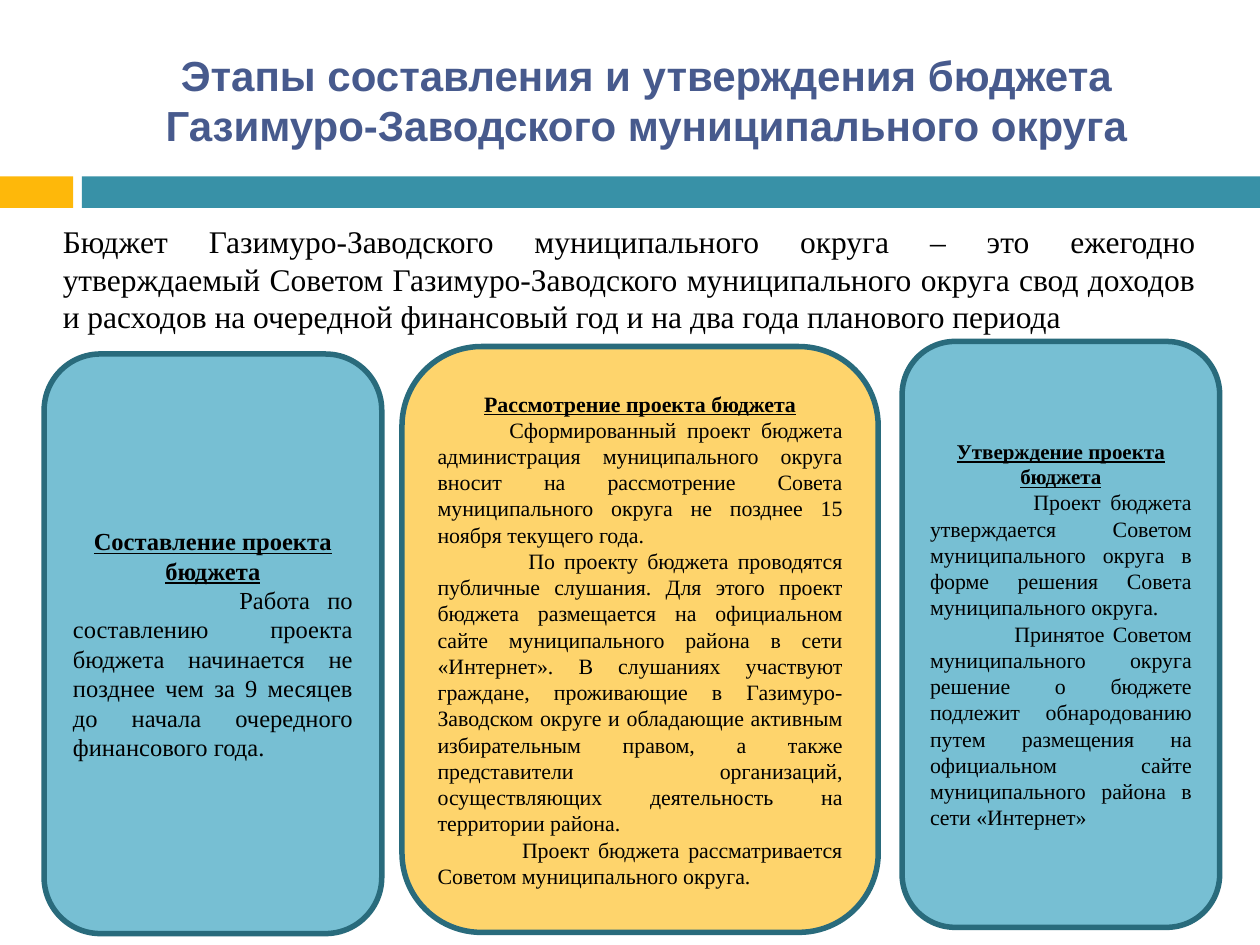
import pptx
import pptx.util
import pptx.dml.color
from pptx.enum.shapes import MSO_SHAPE
from pptx.enum.text import MSO_ANCHOR, PP_ALIGN

Inches = pptx.util.Inches
Pt = pptx.util.Pt

COLORS = {
    "white": "FFFFFF", "black": "000000", "title": "475A8D", "amber": "FEB80A",
    "teal": "3891A7", "border": "296B7C", "blue": "77BFD3", "yellow": "FED46C",
}
TITLE = "Этапы составления и утверждения бюджета Газимуро-Заводского муниципального округа"
INTRO = (
    "Бюджет Газимуро-Заводского муниципального округа – это ежегодно утверждаемый "
    "Советом Газимуро-Заводского муниципального округа свод доходов и расходов "
    "на очередной финансовый год и на два года планового периода"
)
BANDS = [((0, 1.4, 0.58, 0.25), "amber"), ((0.65, 1.4, 9.35, 0.25), "teal")]
STAGES = [
    {
        "box": (0.35, 2.81, 2.68, 4.6), "fill": "blue", "sizes": (14, 14),
        "heading": "Составление проекта бюджета",
        "body": [
            (1.32, "Работа по составлению проекта бюджета начинается не позднее чем "
                   "за 9 месяцев до начала очередного финансового года."),
        ],
    },
    {
        "box": (3.19, 2.75, 3.78, 4.65), "fill": "yellow", "sizes": (12.5, 12.5),
        "heading": "Рассмотрение проекта бюджета",
        "body": [
            (0.57, "Сформированный проект бюджета администрация муниципального округа "
                   "вносит на рассмотрение Совета муниципального округа не позднее "
                   "15 ноября текущего года."),
            (0.72, "По проекту бюджета проводятся публичные слушания. Для этого проект "
                   "бюджета размещается на официальном сайте муниципального района в сети "
                   "«Интернет». В слушаниях участвуют граждане, проживающие в "
                   "Газимуро-Заводском округе и обладающие активным избирательным правом, "
                   "а также представители организаций, осуществляющих деятельность на "
                   "территории района."),
            (0.67, "Проект бюджета рассматривается Советом муниципального округа."),
        ],
    },
    {
        "box": (7.16, 2.71, 2.52, 4.65), "fill": "blue", "sizes": (12, 12.5),
        "heading": "Утверждение проекта бюджета",
        "body": [
            (0.82, "Проект бюджета утверждается Советом муниципального округа в форме "
                   "решения Совета муниципального округа."),
            (0.67, "Принятое Советом муниципального округа решение о бюджете подлежит "
                   "обнародованию путем размещения на официальном сайте муниципального "
                   "района в сети «Интернет»"),
        ],
    },
]


def rgb(name):
    return pptx.dml.color.RGBColor.from_string(COLORS[name])


def add_box(slide, kind, box, fill, line=None):
    sp = slide.shapes.add_shape(kind, *map(Inches, box))
    sp.shadow.inherit = False
    sp.fill.solid()
    sp.fill.fore_color.rgb = rgb(fill)
    if line:
        sp.line.color.rgb = rgb(line)
        sp.line.width = Pt(3.15)
    else:
        sp.line.fill.background()
    return sp


def write(sp, paragraphs):
    tf = sp.text_frame
    tf.word_wrap = True
    tf.vertical_anchor = MSO_ANCHOR.MIDDLE
    for i, (text, size, align, indent, style) in enumerate(paragraphs):
        p = tf.paragraphs[0] if i == 0 else tf.add_paragraph()
        p.alignment = align
        if indent:
            p._p.get_or_add_pPr().set("indent", str(Inches(indent)))
        r = p.add_run()
        r.text = text
        r.font.size = Pt(size)
        r.font.name = style.get("font", "Times New Roman")
        r.font.color.rgb = rgb(style.get("color", "black"))
        r.font.bold = style.get("bold", False)
        r.font.underline = style.get("underline", False)


def main():
    prs = pptx.Presentation()
    prs.slide_width, prs.slide_height = Inches(10), Inches(7.5)
    s = prs.slides.add_slide(prs.slide_layouts[6])

    for box, fill in BANDS:
        add_box(s, MSO_SHAPE.RECTANGLE, box, fill)

    title = s.shapes.add_textbox(*map(Inches, (0.67, 0.25, 8.92, 1.08)))
    title_style = {"font": "Arial", "color": "title", "bold": True}
    write(title, [(TITLE, 24, PP_ALIGN.CENTER, 0, title_style)])

    intro = add_box(s, MSO_SHAPE.ROUNDED_RECTANGLE, (0.35, 1.7, 9.29, 1.02), "white", "white")
    write(intro, [(INTRO, 18, PP_ALIGN.JUSTIFY, 0, {})])

    heading_style = {"bold": True, "underline": True}
    for stage in STAGES:
        sp = add_box(s, MSO_SHAPE.ROUNDED_RECTANGLE, stage["box"], stage["fill"], "border")
        heading_size, body_size = stage["sizes"]
        paragraphs = [(stage["heading"], heading_size, PP_ALIGN.CENTER, 0, heading_style)]
        paragraphs += [(text, body_size, PP_ALIGN.JUSTIFY, indent, {})
                       for indent, text in stage["body"]]
        write(sp, paragraphs)

    prs.save("out.pptx")


if __name__ == "__main__":
    main()
